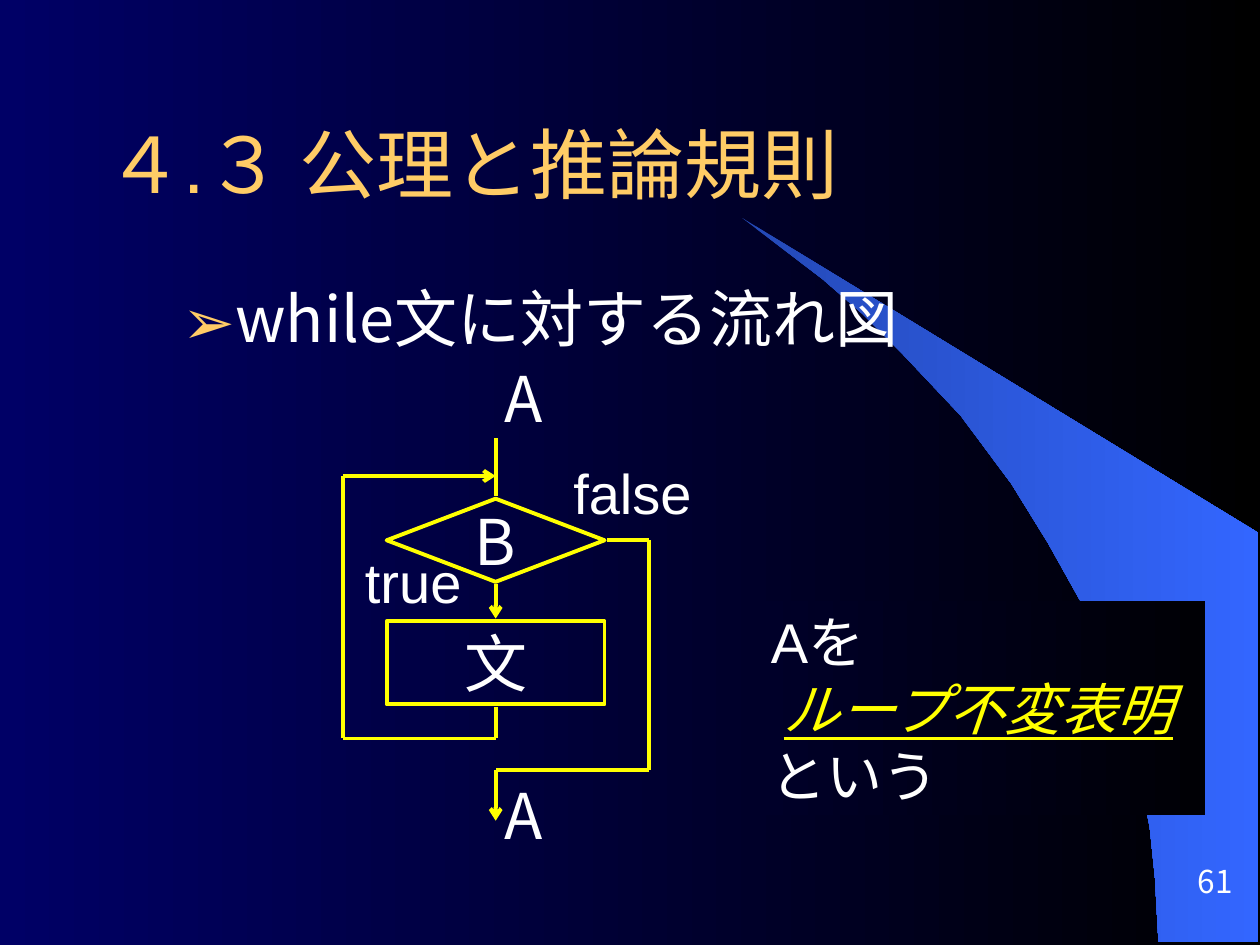
from lxml.etree import SubElement
from pptx import Presentation
from pptx.dml.color import RGBColor
from pptx.enum.shapes import MSO_CONNECTOR, MSO_SHAPE
from pptx.enum.text import MSO_ANCHOR, PP_ALIGN
from pptx.oxml.ns import qn
from pptx.util import Pt

COLORS = {
    "navy": "000066", "black": "000000", "panel left": "000029", "panel right": "000005",
    "blue dark": "2449B6", "blue": "3366FF",
    "gold": "FFCC66", "yellow": "FFFF00", "white": "FFFFFF",
}
CJK = "Noto Sans CJK JP"
BODY = {"name": CJK, "size": Pt(36)}
LABEL = {"name": "Arial", "size": Pt(32)}
TERM = {**LABEL, "italic": True, "underline": True}


def color(name):
    return RGBColor.from_string(COLORS[name])


def set_gradient(fill, start, end):
    fill.gradient()
    fill.gradient_angle = 0
    for stop, name in zip(fill.gradient_stops, (start, end)):
        stop.color.rgb = color(name)


def add_span(para, text, font, hue="white"):
    span = para.add_run()
    span.text = text
    for key, value in font.items():
        setattr(span.font, key, value)
    span.font.color.rgb = color(hue)
    SubElement(span.font._element, qn("a:ea"), typeface=CJK)


def set_frame(frame, **formats):
    for key, value in formats.items():
        setattr(frame, key, value)
    return frame.paragraphs[0]


def add_text(page, box, text, font, hue="white", **formats):
    area = page.shapes.add_textbox(*map(Pt, box))
    para = set_frame(area.text_frame, **{"word_wrap": True, **formats})
    add_span(para, text, font, hue)
    return para


def add_swoosh(page, box):
    left, top, width, height = box
    # Straight upper edge, then the curved lower edge from the tip down
    outline = [(295, 0), (295, 180), (0, 0), (25, 19), (46, 35), (69, 55), (91, 77),
               (125, 113), (154, 152), (175, 186), (194, 220), (208, 256), (219, 287),
               (226, 314), (233, 348), (236, 377), (238, 414), (295, 414)]
    points = [(Pt(left + x), Pt(top + y)) for x, y in outline[1:]]
    builder = page.shapes.build_freeform(*points[0])
    builder.add_line_segments(points[1:], close=True)
    swoosh = builder.convert_to_shape()
    swoosh.shadow.inherit = False
    swoosh.line.fill.background()
    set_gradient(swoosh.fill, "blue dark", "blue")


def add_heading(page, box):
    add_text(page, box, "４.３ 公理と推論規則", {"name": "Arial", "size": Pt(44)}, "gold",
             vertical_anchor=MSO_ANCHOR.MIDDLE)


def add_bullet(page, box):
    para = add_text(page, box, "while文に対する流れ図", BODY,
                    margin_left=Pt(14.4), margin_right=Pt(14.4))
    props = para._p.get_or_add_pPr()
    props.set("marL", str(Pt(58.5)))
    props.set("indent", str(Pt(-22.5)))
    hue = SubElement(props, qn("a:buClr"))
    SubElement(hue, qn("a:srgbClr"), val=COLORS["gold"])
    SubElement(props, qn("a:buFont"), typeface=CJK)
    SubElement(props, qn("a:buChar"), char="➢")


def add_node(page, kind, box, text):
    node = page.shapes.add_shape(kind, *map(Pt, box))
    node.shadow.inherit = False
    node.fill.background()
    node.line.color.rgb = color("yellow")
    node.line.width = Pt(2.25)
    para = set_frame(node.text_frame, word_wrap=False, vertical_anchor=MSO_ANCHOR.MIDDLE)
    para.alignment = PP_ALIGN.CENTER
    add_span(para, text, BODY)


def add_line(page, start, end, arrow=False):
    line = page.shapes.add_connector(MSO_CONNECTOR.STRAIGHT, *map(Pt, (*start, *end)))
    line.line.color.rgb = color("yellow")
    line.line.width = Pt(2.25)
    if arrow:
        SubElement(line.line._get_or_add_ln(), qn("a:tailEnd"), type="arrow")
    SubElement(line._element.spPr, qn("a:effectLst"))


def add_flowchart(page, box):
    left, top, width, height = box
    node_width, node_height, gap = 124.5, 47.5, 1.5
    node_left = left + 25
    trunk = node_left + node_width / 2
    right = left + width
    test_top, body_top = top + 83, top + 153
    test_middle = test_top + node_height / 2
    test_bottom, body_bottom = test_top + node_height, body_top + node_height
    join, back, leave = top + 70, top + 220, top + 238

    # Condition and loop body
    for kind, node_top, text in ((MSO_SHAPE.FLOWCHART_DECISION, test_top, "B"),
                                 (MSO_SHAPE.RECTANGLE, body_top, "文")):
        add_node(page, kind, (node_left, node_top, node_width, node_height), text)

    # Trunk, loop back on the left, way out on the right
    for start, end, arrow in (
        ((trunk, top + 48.5), (trunk, test_top - gap), False),
        ((trunk, test_bottom + gap), (trunk, body_top - gap), True),
        ((trunk, body_bottom + gap), (trunk, back), False),
        ((trunk, back), (left, back), False),
        ((left, back), (left, join), False),
        ((left, join), (trunk, join), True),
        ((node_left + node_width + gap, test_middle), (right, test_middle), False),
        ((right, test_middle), (right, leave), False),
        ((right, leave), (trunk, leave), False),
        ((trunk, leave), (trunk, top + height), True),
    ):
        add_line(page, start, end, arrow)

    # Assertions and branch labels
    for x, y, label_width, text, font in (
        (85, 0, 57, "A", BODY), (5.5, 107.5, 108, "true", LABEL),
        (124.5, 56.5, 91, "false", LABEL), (85, 238, 57, "A", BODY),
    ):
        add_text(page, (left + x, top + y, label_width, 50), text, font)


def add_remark(page, box):
    panel = page.shapes.add_shape(MSO_SHAPE.RECTANGLE, *map(Pt, box))
    panel.shadow.inherit = False
    panel.line.fill.background()
    set_gradient(panel.fill, "panel left", "panel right")
    para = set_frame(panel.text_frame, word_wrap=True, vertical_anchor=MSO_ANCHOR.TOP)
    para.alignment = PP_ALIGN.LEFT
    add_span(para, "Aを", LABEL)
    para.add_line_break()
    add_span(para, " ", LABEL)
    add_span(para, "ループ不変表明", TERM, "yellow")
    para.add_line_break()
    add_span(para, "という", LABEL)
    # Line breaks take the size of the text around them
    for line_break in para._p.findall(qn("a:br")):
        SubElement(line_break, qn("a:rPr"), sz="3200")


def add_page_number(page, box):
    para = add_text(page, box, "61", {"name": CJK, "size": Pt(18)}, word_wrap=False,
                    vertical_anchor=MSO_ANCHOR.BOTTOM, margin_top=0, margin_bottom=0)
    para.alignment = PP_ALIGN.RIGHT


def main():
    deck = Presentation()
    deck.slide_width, deck.slide_height = Pt(720), Pt(540)
    page = deck.slides.add_slide(deck.slide_layouts[6])
    set_gradient(page.background.fill, "navy", "black")
    add_swoosh(page, (424, 124.5, 295, 414))
    add_heading(page, (54, 48, 636.5, 90))
    add_bullet(page, (54, 156, 612, 63.5))
    add_page_number(page, (638, 484, 73.5, 30))
    add_flowchart(page, (196, 202, 175, 267))
    add_remark(page, (433.5, 343.5, 255, 122.5))
    deck.save("out.pptx")


if __name__ == "__main__":
    main()
